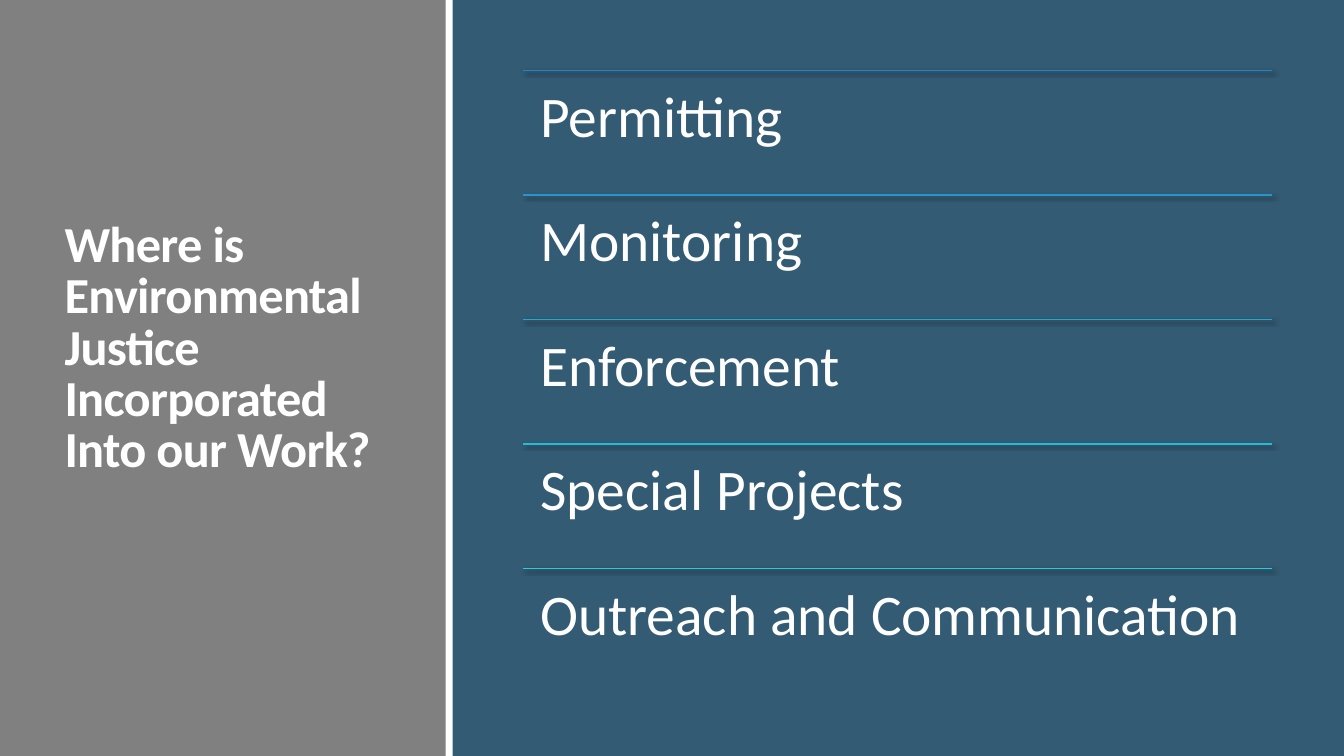
from lxml.etree import SubElement
from pptx import Presentation
from pptx.dml.color import RGBColor
from pptx.enum.shapes import MSO_CONNECTOR, MSO_SHAPE
from pptx.enum.text import MSO_ANCHOR, MSO_AUTO_SIZE, PP_ALIGN
from pptx.oxml.ns import qn
from pptx.util import Inches, Pt

COLORS = {
    "background": "335B74",
    "panel": "808080",
    "white": "FFFFFF",
    "shadow": "000000",
}
WORK_AREAS = [
    ("Permitting", "2683C6"),
    ("Monitoring", "2695CA"),
    ("Enforcement", "27A7CE"),
    ("Special Projects", "27BAD3"),
    ("Outreach and Communication", "27CED7"),
]
LIST_LEFT, LIST_TOP, LIST_WIDTH, ROW_HEIGHT = 5.19, 0.7, 7.43, 1.235


def rgb(name):
    return RGBColor.from_string(COLORS[name])


def format_text(paragraph, size, line_spacing, bold=False):
    paragraph.alignment = PP_ALIGN.LEFT
    paragraph.line_spacing = line_spacing
    for run in paragraph.runs:
        run.font.name = "Calibri"
        run.font.size = Pt(size)
        run.font.bold = bold
        run.font.color.rgb = rgb("white")


def add_band(slide, left, width, color):
    shape = slide.shapes.add_shape(
        MSO_SHAPE.RECTANGLE, Inches(left), 0, Inches(width), Inches(7.5))
    shape.shadow.inherit = False
    shape.fill.solid()
    shape.fill.fore_color.rgb = rgb(color)
    shape.line.fill.background()


def set_title(slide, text):
    title = slide.shapes.title
    title.left, title.top = Inches(0.54), Inches(0.57)
    title.width, title.height = Inches(3.37), Inches(6.31)
    text_frame = title.text_frame
    text_frame.text = text
    text_frame.word_wrap = True
    text_frame.auto_size = MSO_AUTO_SIZE.NONE
    text_frame.vertical_anchor = MSO_ANCHOR.MIDDLE
    # A deep bottom margin lifts the title above the middle
    text_frame.margin_bottom = Inches(0.56)
    paragraph = text_frame.paragraphs[0]
    format_text(paragraph, 36, 0.85, bold=True)
    for run in paragraph.runs:
        run.font._element.set("spc", "-50")


def add_shadow(connector):
    properties = connector._element.spPr
    effects = SubElement(properties, qn("a:effectLst"))
    shadow = SubElement(
        effects, qn("a:outerShdw"), blurRad=str(Pt(3)), dist=str(Pt(2)),
        dir="2700000", algn="ctr", rotWithShape="0")
    color = SubElement(shadow, qn("a:srgbClr"), val=COLORS["shadow"])
    SubElement(color, qn("a:alpha"), val="60000")


def add_rule(slide, top, color):
    connector = slide.shapes.add_connector(
        MSO_CONNECTOR.STRAIGHT, Inches(LIST_LEFT), Inches(top),
        Inches(LIST_LEFT + LIST_WIDTH), Inches(top))
    connector.line.color.rgb = RGBColor.from_string(color)
    connector.line.width = Pt(1)
    add_shadow(connector)


def add_row_text(slide, top, text):
    box = slide.shapes.add_textbox(
        Inches(LIST_LEFT), Inches(top), Inches(LIST_WIDTH), Inches(ROW_HEIGHT))
    text_frame = box.text_frame
    text_frame.word_wrap = True
    text_frame.margin_left = text_frame.margin_right = Inches(0.17)
    text_frame.margin_top = text_frame.margin_bottom = Inches(0.17)
    text_frame.text = text
    format_text(text_frame.paragraphs[0], 41, 0.9)


def main():
    presentation = Presentation()
    presentation.slide_width = Inches(13.33)
    presentation.slide_height = Inches(7.5)
    slide = presentation.slides.add_slide(presentation.slide_layouts[5])
    slide.background.fill.solid()
    slide.background.fill.fore_color.rgb = rgb("background")

    # Left panel with its white edge; the title goes in front of both
    add_band(slide, 0, 4.43, "panel")
    add_band(slide, 4.42, 0.07, "white")
    set_title(slide, "Where is Environmental Justice Incorporated Into our Work?")
    slide.shapes._spTree.append(slide.shapes.title._element)

    # Ruled list of work areas
    for index, (text, color) in enumerate(WORK_AREAS):
        top = LIST_TOP + index * ROW_HEIGHT
        add_rule(slide, top, color)
        add_row_text(slide, top, text)

    presentation.save("out.pptx")


if __name__ == "__main__":
    main()
